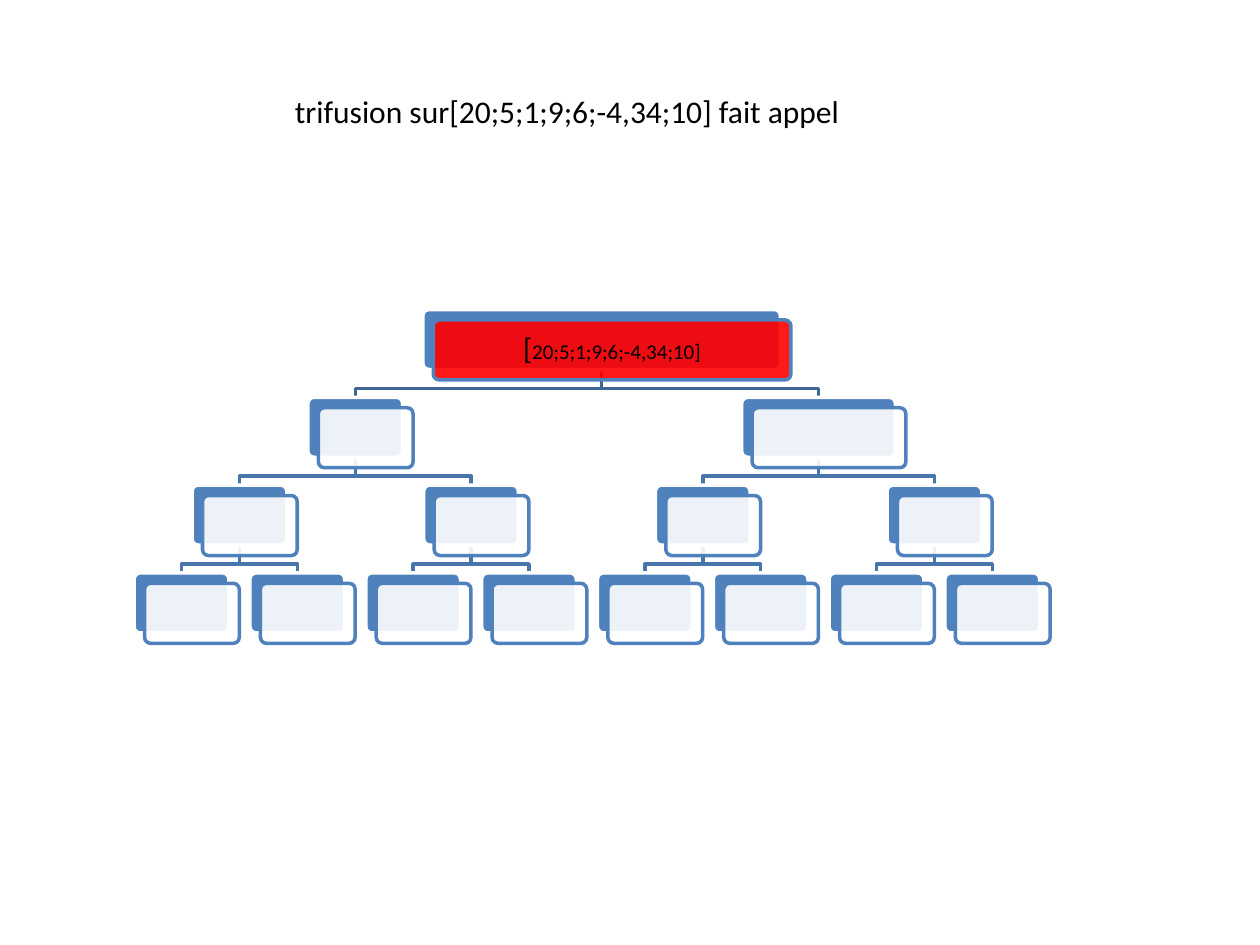
import pptx
import pptx.dml.color
import pptx.enum.shapes
import pptx.enum.text
import pptx.oxml.ns
import pptx.util
from lxml import etree

Cm = pptx.util.Cm
RGBColor = pptx.dml.color.RGBColor
Anchor = pptx.enum.text.MSO_ANCHOR
Align = pptx.enum.text.PP_ALIGN

BLUE = RGBColor(0x4F, 0x81, 0xBD)
ROOT_LINK = RGBColor(0x3F, 0x67, 0x97)
LINK = RGBColor(0x48, 0x75, 0xAC)
RED = RGBColor(0xFF, 0x00, 0x00)
WHITE = RGBColor(0xFF, 0xFF, 0xFF)
BLACK = RGBColor(0x00, 0x00, 0x00)

LEAF_COUNT = 8
FIRST_LEAF_CENTER = 3.66
LEAF_PITCH = 2.335
ROOT_CENTER = 12.13
TREE_TOP = 6.24
LEVEL_PITCH = 1.77
NODE_HEIGHT = 1.21
NODE_WIDTH = 1.91
RIGHT_HALF_WIDTH = 3.1
ROOT_WIDTH = 7.21
FRONT_OFFSET = 0.21
ELBOW_RISE = 0.18


class TreeSlide:
    font_name = "Calibri"
    line_width = pptx.util.Pt(2)

    def __init__(self, presentation):
        self.slide = presentation.slides.add_slide(presentation.slide_layouts[5])

    def format_run(self, run, size):
        run.font.name = self.font_name
        run.font.size = pptx.util.Pt(size)
        run.font.color.rgb = BLACK

    def title(self, text, left, top, width, height):
        shape = self.slide.shapes.title
        shape.left, shape.top = Cm(left), Cm(top)
        shape.width, shape.height = Cm(width), Cm(height)
        text_frame = shape.text_frame
        text_frame.text = text
        text_frame.word_wrap = True
        text_frame.auto_size = pptx.enum.text.MSO_AUTO_SIZE.NONE
        text_frame.vertical_anchor = Anchor.TOP
        paragraph = text_frame.paragraphs[0]
        paragraph.alignment = Align.LEFT
        self.format_run(paragraph.runs[0], 18)

    def link(self, parent, child, color):
        start_x, start_y = parent[0], parent[1] + NODE_HEIGHT
        end_x, end_y = child
        elbow_y = end_y - ELBOW_RISE
        builder = self.slide.shapes.build_freeform(Cm(start_x), Cm(start_y))
        points = [(start_x, elbow_y), (end_x, elbow_y), (end_x, end_y)]
        builder.add_line_segments([(Cm(x), Cm(y)) for x, y in points], close=False)
        shape = builder.convert_to_shape()
        shape.shadow.inherit = False
        shape.fill.background()
        shape.line.color.rgb = color
        shape.line.width = self.line_width

    def card(self, left, top, width, fill, line):
        shape = self.slide.shapes.add_shape(
            pptx.enum.shapes.MSO_SHAPE.ROUNDED_RECTANGLE,
            Cm(left), Cm(top), Cm(width), Cm(NODE_HEIGHT))
        shape.adjustments[0] = 0.1
        shape.shadow.inherit = False
        shape.fill.solid()
        shape.fill.fore_color.rgb = fill
        shape.line.color.rgb = line
        shape.line.width = self.line_width
        return shape

    def node(self, center, top, width, fill):
        left = center - width / 2
        self.card(left, top, width, BLUE, WHITE)
        front = self.card(left + FRONT_OFFSET, top + FRONT_OFFSET, width, fill, BLUE)
        qn = pptx.oxml.ns.qn
        color = front.fill._xPr.find(qn("a:solidFill")).find(qn("a:srgbClr"))
        etree.SubElement(color, qn("a:alpha")).set("val", "90000")
        return front

    def label(self, shape, parts):
        text_frame = shape.text_frame
        text_frame.word_wrap = True
        text_frame.vertical_anchor = Anchor.MIDDLE
        text_frame.margin_left = text_frame.margin_right = Cm(0.18)
        text_frame.margin_top = text_frame.margin_bottom = Cm(0.18)
        paragraph = text_frame.paragraphs[0]
        paragraph.alignment = Align.CENTER
        paragraph.line_spacing = 0.9
        for text, size in parts:
            run = paragraph.add_run()
            run.text = text
            self.format_run(run, size)


def tree_levels():
    centers = [FIRST_LEAF_CENTER + LEAF_PITCH * i for i in range(LEAF_COUNT)]
    levels = [centers]
    while len(centers) > 2:
        centers = [(a + b) / 2 for a, b in zip(centers[::2], centers[1::2])]
        levels.insert(0, centers)
    levels.insert(0, [ROOT_CENTER])
    return [[(center, TREE_TOP + LEVEL_PITCH * depth) for center in level]
            for depth, level in enumerate(levels)]


def main():
    presentation = pptx.Presentation()
    presentation.slide_width, presentation.slide_height = Cm(25.4), Cm(19.05)
    page = TreeSlide(presentation)
    page.title("trifusion sur[20;5;1;9;6;-4,34;10] fait appel", 5.69, 1.73, 13.41, 3.33)

    levels = tree_levels()
    for depth, (parents, children) in enumerate(zip(levels, levels[1:])):
        for index, child in enumerate(children):
            page.link(parents[index // 2], child, LINK if depth else ROOT_LINK)

    widths = {(0, 0): ROOT_WIDTH, (1, 1): RIGHT_HALF_WIDTH}
    for depth, level in enumerate(levels):
        for index, (center, top) in enumerate(level):
            width = widths.get((depth, index), NODE_WIDTH)
            front = page.node(center, top, width, WHITE if depth else RED)
            if depth == 0:
                page.label(front, [("[", 17), ("20;5;1;9;6;-4,34;10]", 12)])

    presentation.save("out.pptx")


if __name__ == "__main__":
    main()
